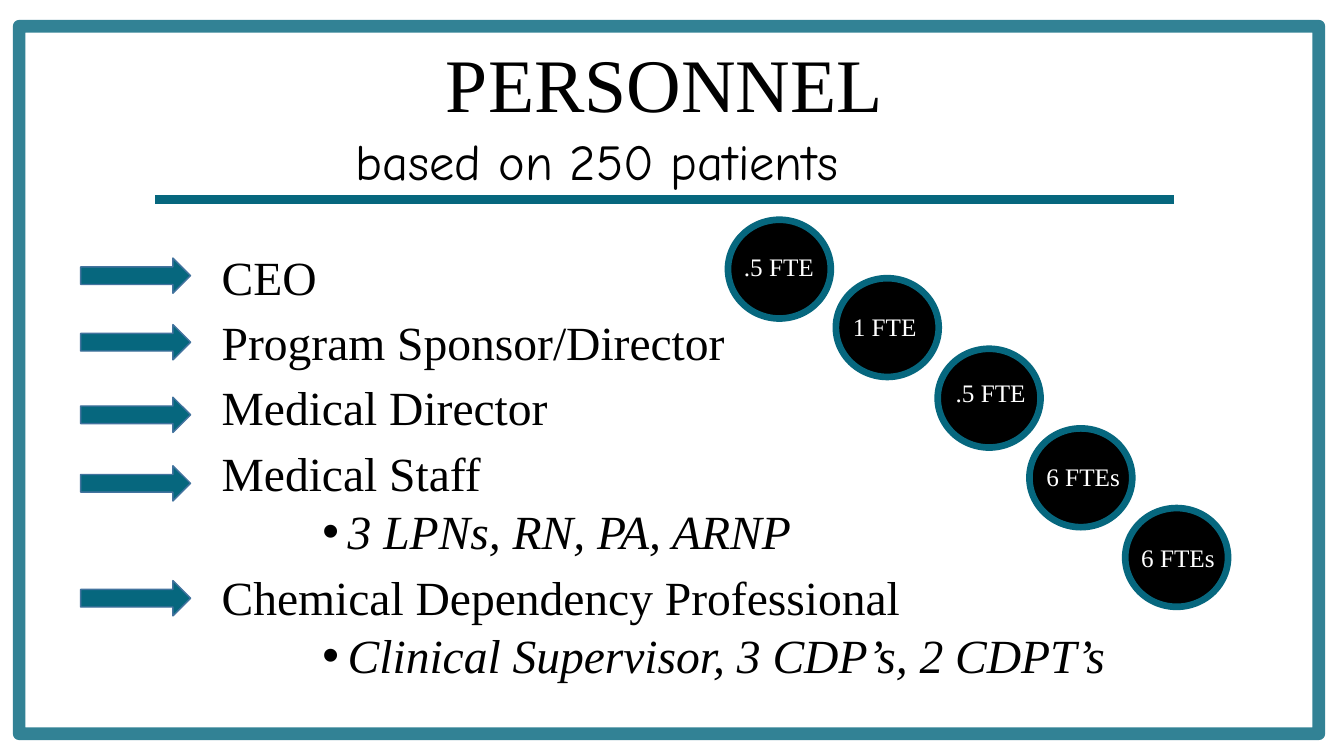
"""Build the personnel slide: roles with arrows, and staffing circles."""
from lxml import etree
from pptx import Presentation
from pptx.dml.color import RGBColor
from pptx.enum.shapes import MSO_CONNECTOR, MSO_SHAPE
from pptx.enum.text import MSO_ANCHOR, PP_ALIGN
from pptx.oxml.ns import qn
from pptx.util import Inches, Pt

OVAL, ARROW, RECT = MSO_SHAPE.OVAL, MSO_SHAPE.RIGHT_ARROW, MSO_SHAPE.RECTANGLE
STRAIGHT = MSO_CONNECTOR.STRAIGHT
CENTER, LEFT = PP_ALIGN.CENTER, PP_ALIGN.LEFT
MIDDLE = MSO_ANCHOR.MIDDLE
TEAL = RGBColor(0x06, 0x67, 0x7E)
EDGE = RGBColor(0x43, 0x73, 0x9E)
BLACK = RGBColor(0, 0, 0)
WHITE = RGBColor(255, 255, 255)
SERIF, COMIC = "Times New Roman", "Comic Neue"

TITLE = "PERSONNEL "
SUBTITLE = "based on 250 patients"
ROLES = [
    ("CEO", False),
    ("Program Sponsor/Director", False),
    ("Medical Director\u00a0".rstrip(), False),
    ("Medical Staff", False),
    ("3 LPNs, RN, PA, ARNP", True),
    ("Chemical Dependency Professional", False),
    ("Clinical Supervisor, 3 CDP’s, 2 CDPT’s", True),
]
ARROW_TOPS = [2.56, 3.22, 3.94, 4.62, 5.76]
STAFF = [
    (".5 FTE", 7.22, 2.18, 0.06, 0.26, 0.9),
    ("1 FTE", 8.29, 2.76, 0.07, 0.28, 0.84),
    (".5 FTE", 9.3, 3.46, 0.08, 0.23, 0.9),
    ("6 FTEs", 10.21, 4.25, 0.07, 0.28, 0.94),
    ("6 FTEs", 11.16, 5.04, 0.06, 0.29, 0.94),
]


def add_shape(kind, box, fill, line, width):
    shape = slide.shapes.add_shape(kind, *map(Inches, box))
    shape.shadow.inherit = False
    if fill is None:
        shape.fill.background()
    else:
        shape.fill.solid()
        shape.fill.fore_color.rgb = fill
    shape.line.color.rgb = line
    shape.line.width = Pt(width)
    return shape


def style(par, text, size, color=BLACK, face=SERIF, align=LEFT):
    par.text = text
    par.alignment = align
    par.font.size = Pt(size)
    par.font.name = face
    par.font.color.rgb = color


def add_frame(box, wrap=True):
    frame = slide.shapes.add_textbox(*map(Inches, box)).text_frame
    frame.word_wrap = wrap
    return frame


def add_bullet(par):
    props = par._p.get_or_add_pPr()
    props.set("marL", str(Inches(1.25)))
    props.set("indent", str(Inches(-0.25)))
    font = etree.SubElement(props, qn("a:buFont"))
    font.set("typeface", "Arial")
    etree.SubElement(props, qn("a:buChar")).set("char", "•")


deck = Presentation()
deck.slide_width, deck.slide_height = Inches(13.33), Inches(7.5)
slide = deck.slides.add_slide(deck.slide_layouts[6])

border = add_shape(RECT, (0.19, 0.26, 12.89, 7.02), None, TEAL, 9)
tint = border.line._ln.find(".//" + qn("a:srgbClr"))
etree.SubElement(tint, qn("a:alpha")).set("val", "81000")

head = add_frame((0.92, 0.3, 11.5, 1.14))
head.vertical_anchor = MIDDLE
style(head.paragraphs[0], TITLE, 54, align=CENTER)
head.paragraphs[0].line_spacing = 0.9
sub = add_frame((3.43, 1.24, 6.41, 0.71))
style(sub.paragraphs[0], SUBTITLE, 36, face=COMIC)

rule = slide.shapes.add_connector(
    STRAIGHT, Inches(1.54), Inches(1.98), Inches(11.64), Inches(1.98))
rule.line.color.rgb = TEAL
rule.line.width = Pt(6)
etree.SubElement(rule._element.spPr, qn("a:effectLst"))

body = add_frame((2.1, 2.47, 9.41, 4.91))
for i, (role, detail) in enumerate(ROLES):
    par = body.paragraphs[0] if i == 0 else body.add_paragraph()
    par.line_spacing = 0.9
    if i:
        par.space_before = Pt(5 if detail else 10)
    if detail:
        par.level = 1
        add_bullet(par)
    style(par, role, 34)
    par.font.italic = detail

for top in ARROW_TOPS:
    add_shape(ARROW, (0.8, top, 1.09, 0.35), TEAL, EDGE, 1)

for label, left, top, dx, dy, width in STAFF:
    add_shape(OVAL, (left, top, 1.02, 0.98), BLACK, TEAL, 4.75)
    frame = add_frame((left + dx, top + dy, width, 0.4), wrap=False)
    style(frame.paragraphs[0], label, 18, WHITE)

deck.save("out.pptx")
